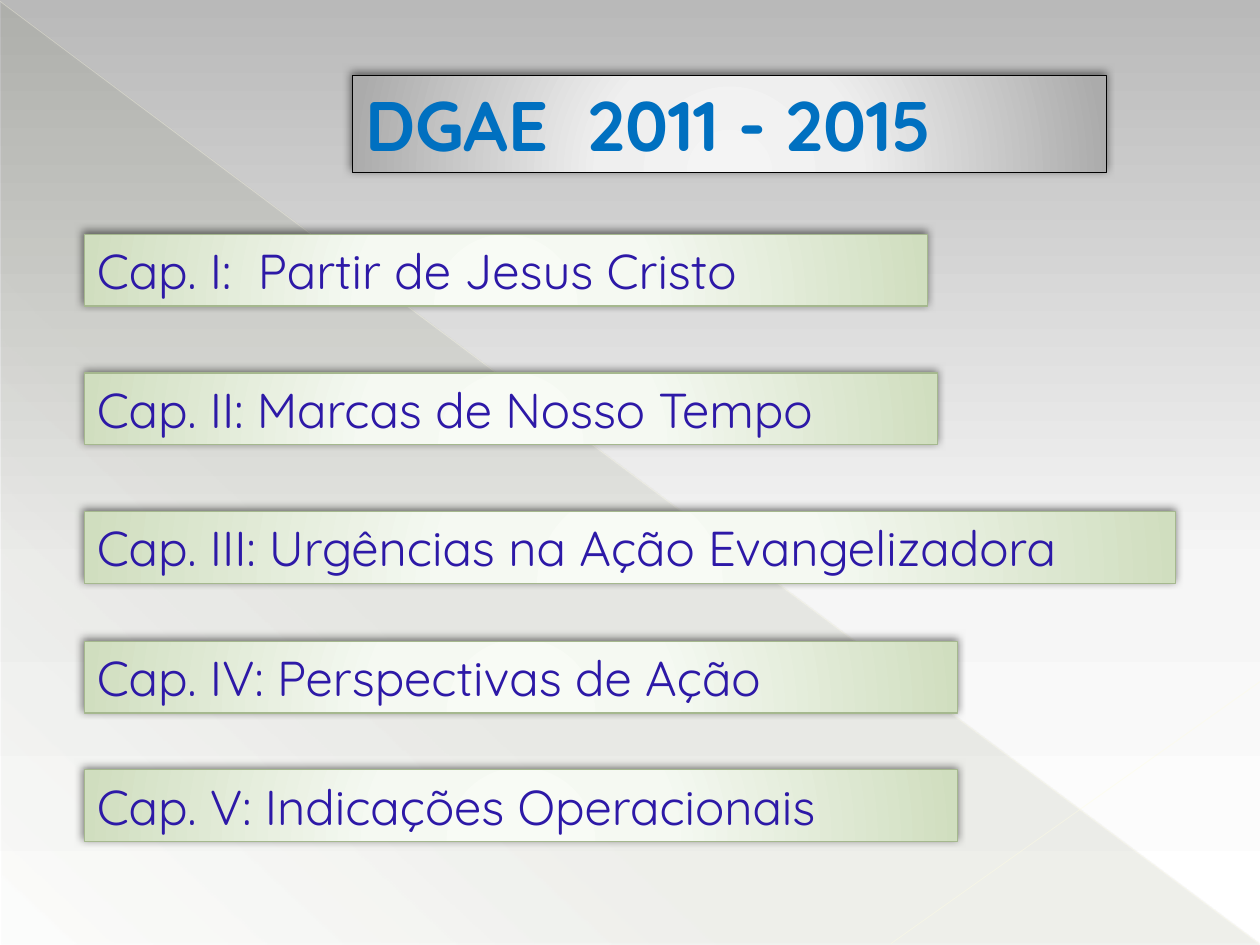
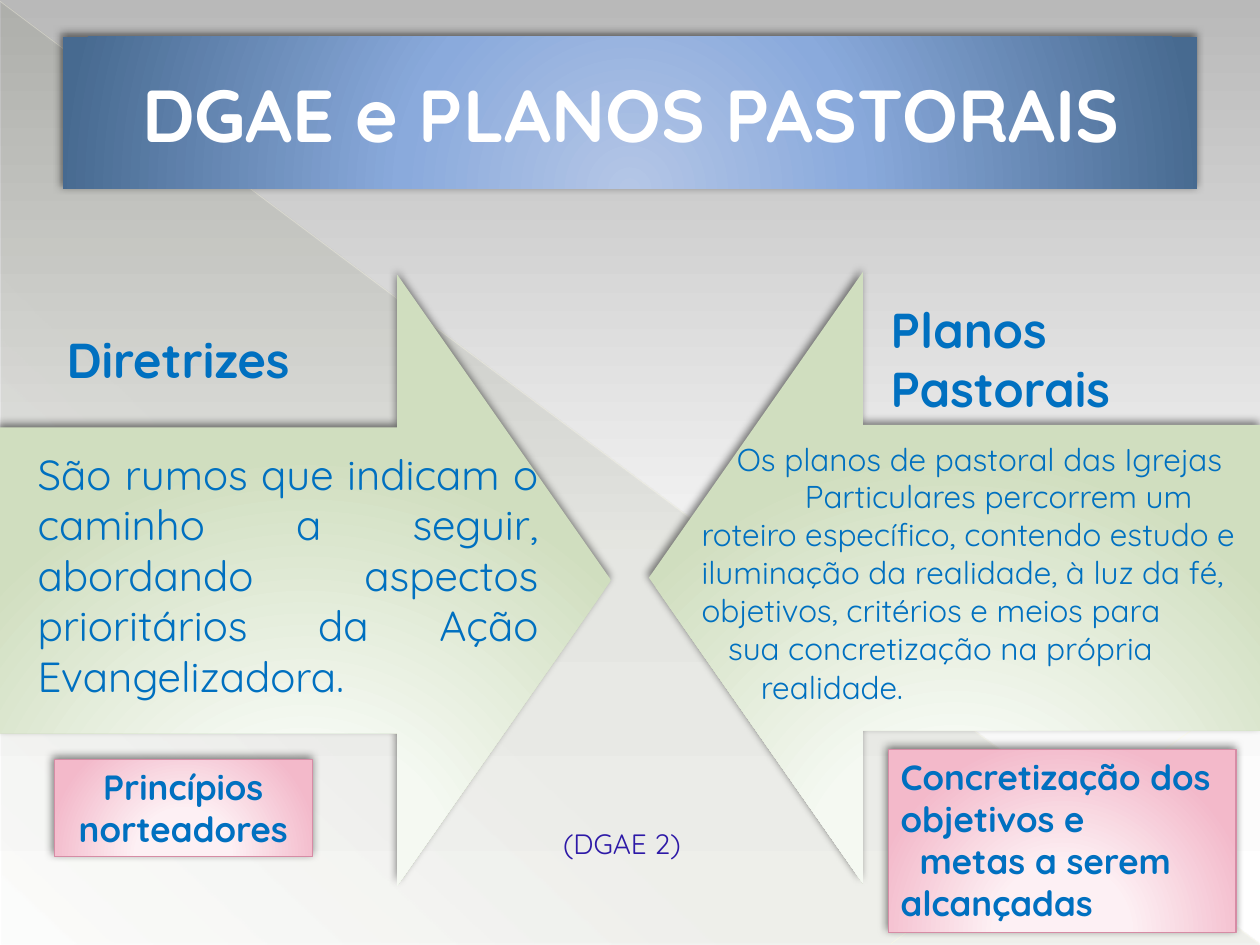
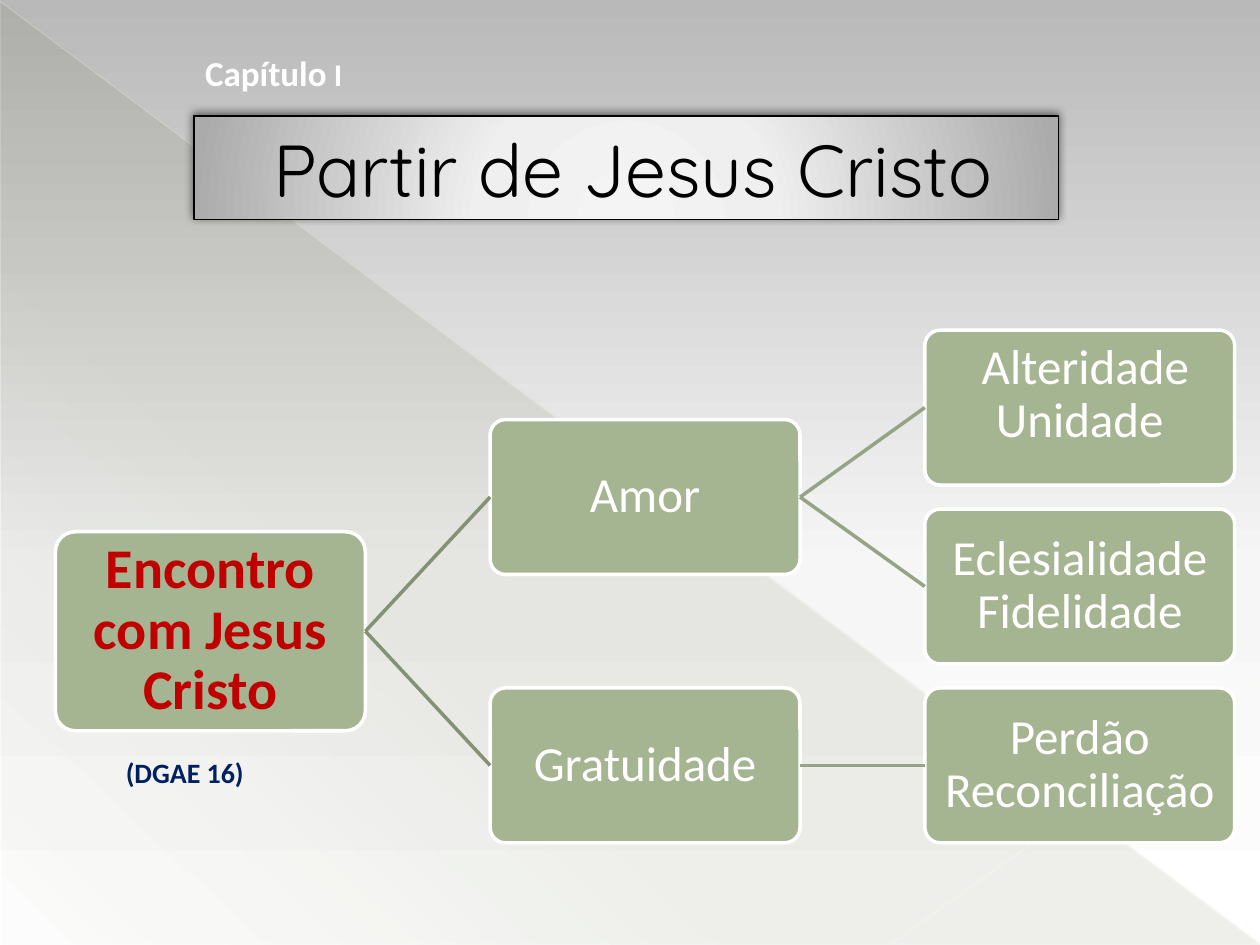
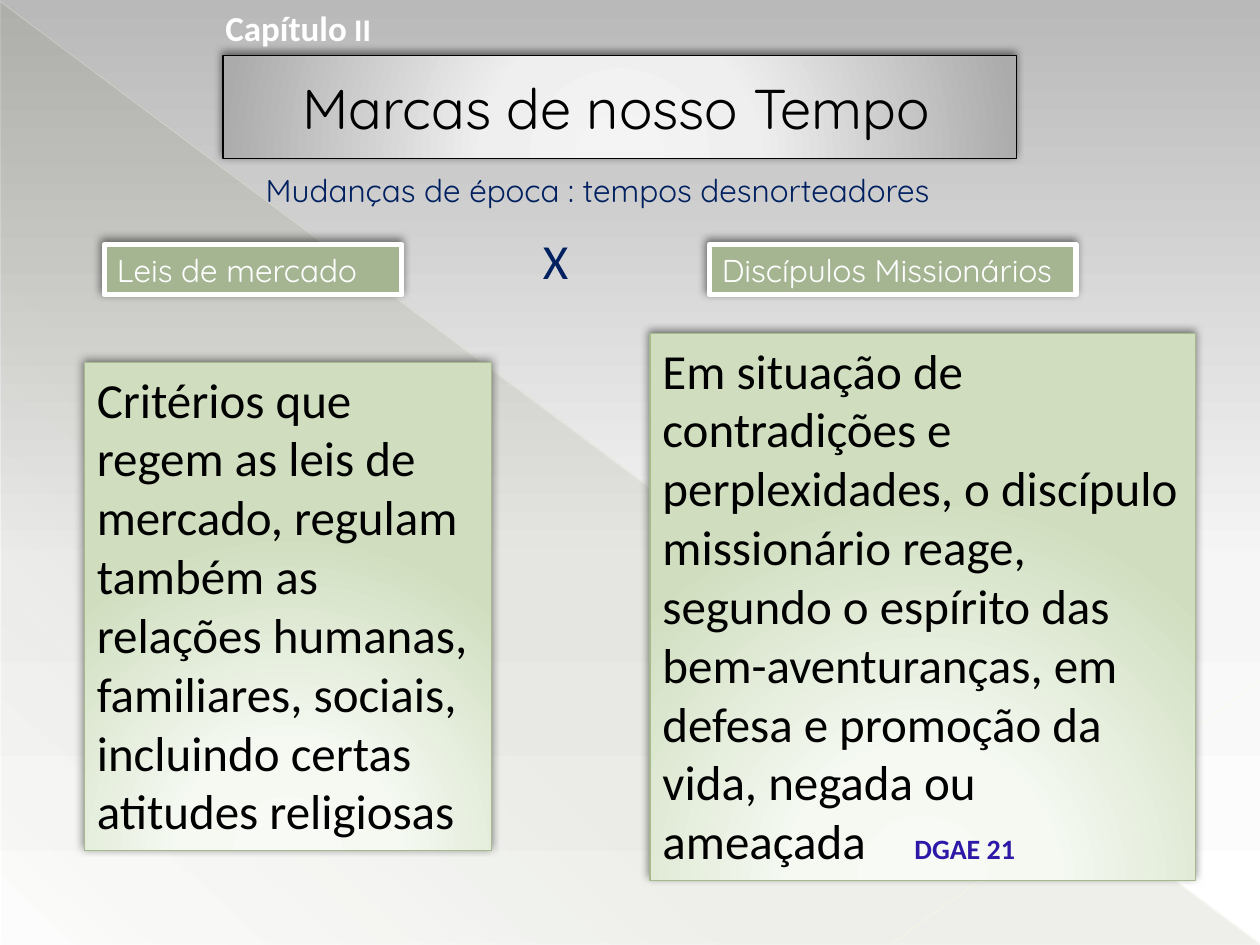
from collections import namedtuple

from lxml.etree import SubElement
from pptx import Presentation
from pptx.dml.color import RGBColor
from pptx.enum.shapes import MSO_CONNECTOR, MSO_SHAPE
from pptx.enum.text import MSO_ANCHOR, PP_ALIGN
from pptx.oxml.ns import qn
from pptx.util import Pt

PX = 9144  # 100 px to the inch
WIDE, HIGH = 1000, 750

RECT, ROUND = MSO_SHAPE.RECTANGLE, MSO_SHAPE.ROUNDED_RECTANGLE
ARROW, WEDGE = MSO_SHAPE.DOWN_ARROW, MSO_SHAPE.RIGHT_TRIANGLE
STRAIGHT = MSO_CONNECTOR.STRAIGHT
TOP, MIDDLE = MSO_ANCHOR.TOP, MSO_ANCHOR.MIDDLE
LEFT, CENTER, JUSTIFY = PP_ALIGN.LEFT, PP_ALIGN.CENTER, PP_ALIGN.JUSTIFY

BLACK = RGBColor(0x00, 0x00, 0x00)
WHITE = RGBColor(0xFF, 0xFF, 0xFF)
BLUE = RGBColor(0x00, 0x70, 0xC0)
NAVY = RGBColor(0x00, 0x20, 0x60)
VIOLET = RGBColor(0x2D, 0x19, 0xA7)
RED = RGBColor(0xC0, 0x00, 0x00)
SAGE = RGBColor(0xA5, 0xB5, 0x92)
LEAF = RGBColor(0xA5, 0xB8, 0x8E)
ROSE = RGBColor(0xD6, 0x8C, 0xA5)
OLIVE = RGBColor(0x44, 0x4D, 0x26)
CREAM = RGBColor(0xFF, 0xFD, 0xE3)
STEM = RGBColor(0x84, 0x91, 0x75)
TWIG = RGBColor(0x96, 0xA4, 0x85)

# Gradient stops: place, colour, opacity (all in percent)
SKY = ((0, RGBColor(0xB9, 0xB9, 0xB9), 100),
       (60, RGBColor(0xF6, 0xF6, 0xF6), 100),
       (100, WHITE, 100))
SHADE = ((0, OLIVE, 10), (70, OLIVE, 8), (100, OLIVE, 1))
GREY_GLOW = ((0, RGBColor(0xF4, 0xF4, 0xF4), 100),
             (34, RGBColor(0xEF, 0xEF, 0xEF), 100),
             (100, RGBColor(0xAB, 0xAB, 0xAB), 100))
GREEN_GLOW = ((0, RGBColor(0xF8, 0xFB, 0xF5), 100),
              (34, RGBColor(0xF5, 0xF9, 0xF2), 100),
              (100, RGBColor(0xD0, 0xDE, 0xBF), 100))
PINK_GLOW = ((0, RGBColor(0xFF, 0xF3, 0xF6), 100),
             (34, RGBColor(0xFD, 0xF0, 0xF4), 100),
             (100, RGBColor(0xF3, 0xB9, 0xCA), 100))
BLUE_GLOW = ((0, RGBColor(0xB4, 0xC6, 0xE6), 100),
             (40, RGBColor(0x8A, 0xAA, 0xDC), 100),
             (100, RGBColor(0x47, 0x6A, 0x90), 100))

Look = namedtuple("Look", "fill edge width shadow")
GREY = Look(GREY_GLOW, BLACK, 0.75, True)
GREEN = Look(GREEN_GLOW, LEAF, 0.75, True)
PINK = Look(PINK_GLOW, ROSE, 0.75, True)
BANNER = Look(BLUE_GLOW, None, 0, True)
POINTER = Look(GREEN_GLOW, None, 0, True)
LABEL = Look(SAGE, WHITE, 3, True)
NODE = Look(SAGE, WHITE, 2, False)
VEIL = Look(SHADE, None, 0, False)

Font = namedtuple("Font", "face size color bold", defaults=(False,))
SOFT, PLAIN = "Quicksand", "Calibri"


def blend(host, stops, angle=None):
    """Fill the host's gradient: linear at an angle, else a glow from below."""
    grad = next(host.iter(qn("a:gradFill")))
    for kid in list(grad):
        grad.remove(kid)
    grad.set("rotWithShape", "0" if angle is None else "1")
    row = SubElement(grad, qn("a:gsLst"))
    for place, color, alpha in stops:
        stop = SubElement(row, qn("a:gs"), pos=str(place * 1000))
        tint = SubElement(stop, qn("a:srgbClr"), val=str(color))
        if alpha < 100:
            SubElement(tint, qn("a:alpha"), val=str(alpha * 1000))
    if angle is None:
        ring = SubElement(grad, qn("a:path"), path="circle")
        SubElement(ring, qn("a:fillToRect"),
                   l="50000", t="155000", r="50000", b="-55000")
    else:
        SubElement(grad, qn("a:lin"), ang=str(angle * 60000), scaled="0")


class Deck:
    def __init__(self):
        self.prs = Presentation()
        self.prs.slide_width, self.prs.slide_height = WIDE * PX, HIGH * PX
        master = self.prs.slide_master
        master.background.fill.gradient()
        blend(master.element, SKY, 90)
        self.slide = None

    def start(self):
        """Open a slide with the shared diagonal backdrop."""
        self.slide = self.prs.slides.add_slide(self.prs.slide_layouts[6])
        self.shape(WEDGE, 1, 2, 999, 748, VEIL, angle=133)
        self.line(0, 1, 999, 749, CREAM, 0.39, 35)
        self.line(1000, 541, 707, 749, CREAM, 0.47, 45)

    def shape(self, kind, x, y, w, h, look, angle=None, turn=0):
        item = self.slide.shapes.add_shape(kind, x * PX, y * PX, w * PX, h * PX)
        item.rotation = turn
        if isinstance(look.fill, RGBColor):
            item.fill.solid()
            item.fill.fore_color.rgb = look.fill
        else:
            item.fill.gradient()
            blend(item.element, look.fill, angle)
        if look.edge is None:
            item.line.fill.background()
        else:
            item.line.color.rgb = look.edge
            item.line.width = Pt(look.width)
        item.shadow.inherit = False
        if look.shadow:
            glow = SubElement(next(item.element.iter(qn("a:effectLst"))),
                              qn("a:outerShdw"), blurRad=str(Pt(5)),
                              dist=str(Pt(2)), dir=str(245 * 60000),
                              algn="tl", rotWithShape="0")
            tint = SubElement(glow, qn("a:srgbClr"), val=str(BLACK))
            SubElement(tint, qn("a:alpha"), val="50000")
        item.text_frame.word_wrap = True
        item.text_frame.vertical_anchor = TOP
        return item

    def box(self, x, y, w, h, look, text, font, align=LEFT):
        item = self.shape(RECT, x, y, w, h, look)
        self.para(item, (text, font), align=align)
        return item

    def title(self, x, y, w, h, look, text, font):
        item = self.shape(RECT, x, y, w, h, look)
        item.text_frame.vertical_anchor = MIDDLE
        self.para(item, (text, font), left=53)

    def text(self, x, y, w, h, *runs, align=LEFT):
        item = self.slide.shapes.add_textbox(x * PX, y * PX, w * PX, h * PX)
        item.text_frame.word_wrap = True
        if runs:
            self.para(item, *runs, align=align)
        return item

    def para(self, item, *runs, align=LEFT, left=0, first=0):
        """Add a paragraph of (text, font) runs, indented in px."""
        frame = item.text_frame
        para = frame.paragraphs[-1]
        if para.runs:
            para = frame.add_paragraph()
        para.alignment = align
        props = para._p.get_or_add_pPr()
        props.set("marL", str(left * PX))
        props.set("indent", str(first * PX))
        for words, font in runs:
            run = para.add_run()
            run.text = words
            run.font.name = font.face
            run.font.size = Pt(font.size)
            run.font.bold = font.bold
            run.font.color.rgb = font.color
        return para

    def node(self, x, y, h, text, font, lift=0):
        """Draw a tree node; lift raises its text by px."""
        item = self.shape(ROUND, x, y, 246, h, NODE)
        item.adjustments[0] = 0.1
        frame = item.text_frame
        frame.vertical_anchor = MIDDLE
        frame.margin_left = frame.margin_right = frame.margin_top = 2 * PX
        frame.margin_bottom = (2 + 2 * lift) * PX
        self.para(item, (text, font), align=CENTER).line_spacing = 0.9
        return item

    def line(self, x1, y1, x2, y2, color, width, alpha=100):
        item = self.slide.shapes.add_connector(
            STRAIGHT, x1 * PX, y1 * PX, x2 * PX, y2 * PX)
        item.line.color.rgb = color
        item.line.width = Pt(width)
        if alpha < 100:
            tint = next(item.element.iter(qn("a:srgbClr")))
            SubElement(tint, qn("a:alpha"), val=str(alpha * 1000))
        SubElement(item.element.spPr, qn("a:effectLst"))
        return item

    def link(self, start, end, color):
        """Join the right side of one node to the left side of another."""
        item = self.line(0, 0, 0, 0, color, 2)
        item.begin_connect(start, 3)
        item.end_connect(end, 1)

    def chapter(self, x, y, number):
        self.text(x, y, 260, 44, ("Capítulo", Font(PLAIN, 20, WHITE, True)),
                  (" " + number, Font(PLAIN, 18, WHITE, True)))


def outline(deck):
    deck.start()
    deck.box(280, 60, 598, 77, GREY, "DGAE  2011 - 2015",
             Font(SOFT, 40, BLUE, True))
    for y, w, text in (
            (186, 669, "Cap. I:  Partir de Jesus Cristo"),
            (296, 677, "Cap. II: Marcas de Nosso Tempo"),
            (406, 866, "Cap. III: Urgências na Ação Evangelizadora"),
            (509, 693, "Cap. IV: Perspectivas de Ação"),
            (611, 693, "Cap. V: Indicações Operacionais")):
        deck.box(67, y, w, 57, GREEN, text, Font(SOFT, 28, VIOLET))


def plans(deck):
    deck.start()
    for x, y, turn in ((0, 218, 270), (515, 216, 90)):
        arrow = deck.shape(ARROW, x, y, 485, 485, POINTER, turn=turn)
        arrow.adjustments[0], arrow.adjustments[1] = 0.5, 0.35
    deck.title(50, 29, 900, 121, BANNER, "DGAE e PLANOS PASTORAIS",
               Font(SOFT, 42, WHITE, True))
    deck.text(20, 351, 417, 242,
              ("São rumos que indicam o caminho a seguir, abordando aspectos "
               "prioritários da Ação Evangelizadora.", Font(SOFT, 24, BLUE)),
              align=JUSTIFY)
    body = Font(SOFT, 18, BLUE)
    goals = deck.text(547, 344, 453, 222)
    for left, words in (
            (28, "Os planos de pastoral das Igrejas"),
            (82, "Particulares percorrem um"),
            (0, "roteiro específico, contendo estudo e iluminação da "
                "realidade, à luz da fé, objetivos, critérios e meios para"),
            (21, "sua concretização na própria")):
        deck.para(goals, (words, body), left=left)
    deck.text(594, 525, 150, 40, ("realidade.", body))
    head = Font(SOFT, 28, BLUE, True)
    deck.text(43, 257, 220, 57, ("Diretrizes", head))
    deck.text(697, 233, 268, 104, ("Planos Pastorais", head))
    note = Font(SOFT, 20, BLUE, True)
    deck.box(43, 603, 205, 77, PINK, "Princípios norteadores", note, CENTER)
    aims = deck.box(705, 595, 276, 145, PINK,
                    "Concretização dos objetivos e", note)
    deck.para(aims, ("metas a serem alcançadas", note), first=15)
    deck.text(437, 651, 142, 37, ("(DGAE 2)", Font(SOFT, 16, VIOLET)))


def origin(deck):
    deck.start()
    deck.title(154, 92, 686, 82, GREY, "Partir de Jesus Cristo",
               Font(SOFT, 42, BLACK))
    deck.chapter(153, 36, "I")
    leaf = Font(PLAIN, 28, WHITE)
    root = deck.node(44, 422, 158, "Encontro com Jesus Cristo",
                     Font(PLAIN, 32, RED, True))
    for y, name, ends in (
            (333, "Amor", ((262, " Alteridade Unidade", 10),
                           (404, "Eclesialidade Fidelidade", 0))),
            (546, "Gratuidade", ((546, "Perdão Reconciliação", 0),))):
        branch = deck.node(389, y, 123, name, leaf)
        deck.link(root, branch, STEM)
        for top, text, lift in ends:
            deck.link(branch, deck.node(734, top, 123, text, leaf, lift), TWIG)
    deck.text(90, 595, 158, 37, ("(DGAE 16)", Font(PLAIN, 16, NAVY, True)))


def times(deck):
    deck.start()
    deck.title(177, 44, 630, 82, GREY, "Marcas de nosso Tempo",
               Font(SOFT, 32, BLACK))
    deck.chapter(169, 0, "II")
    deck.text(201, 131, 709, 40, ("Mudanças de época : tempos desnorteadores",
                                  Font(SOFT, 18, NAVY)))
    body = Font(PLAIN, 28, BLACK)
    deck.box(67, 288, 323, 387, GREEN,
             "Critérios que regem as leis de mercado, regulam também as "
             "relações humanas, familiares, sociais, incluindo certas "
             "atitudes religiosas", body)
    reply = deck.shape(RECT, 516, 265, 433, 434, GREEN)
    para = deck.para(
        reply,
        ("Em situação de contradições e perplexidades, o discípulo "
         "missionário reage, segundo o espírito das bem-aventuranças, em "
         "defesa e promoção da vida, negada ou ameaçada\t", body),
        ("DGAE 21", Font(PLAIN, 16, VIOLET, True)))
    tabs = SubElement(para._p.get_or_add_pPr(), qn("a:tabLst"))
    SubElement(tabs, qn("a:tab"), pos=str(292 * PX), algn="l")
    for x, w, text in ((83, 236, "Leis de mercado"),
                       (563, 291, "Discípulos Missionários")):
        deck.box(x, 194, w, 40, LABEL, text, Font(SOFT, 18, WHITE))
    deck.text(421, 178, 55, 57, ("X", Font(PLAIN, 28, NAVY)))


def main():
    deck = Deck()
    for build in (outline, plans, origin, times):
        build(deck)
    deck.prs.save("out.pptx")


if __name__ == "__main__":
    main()
